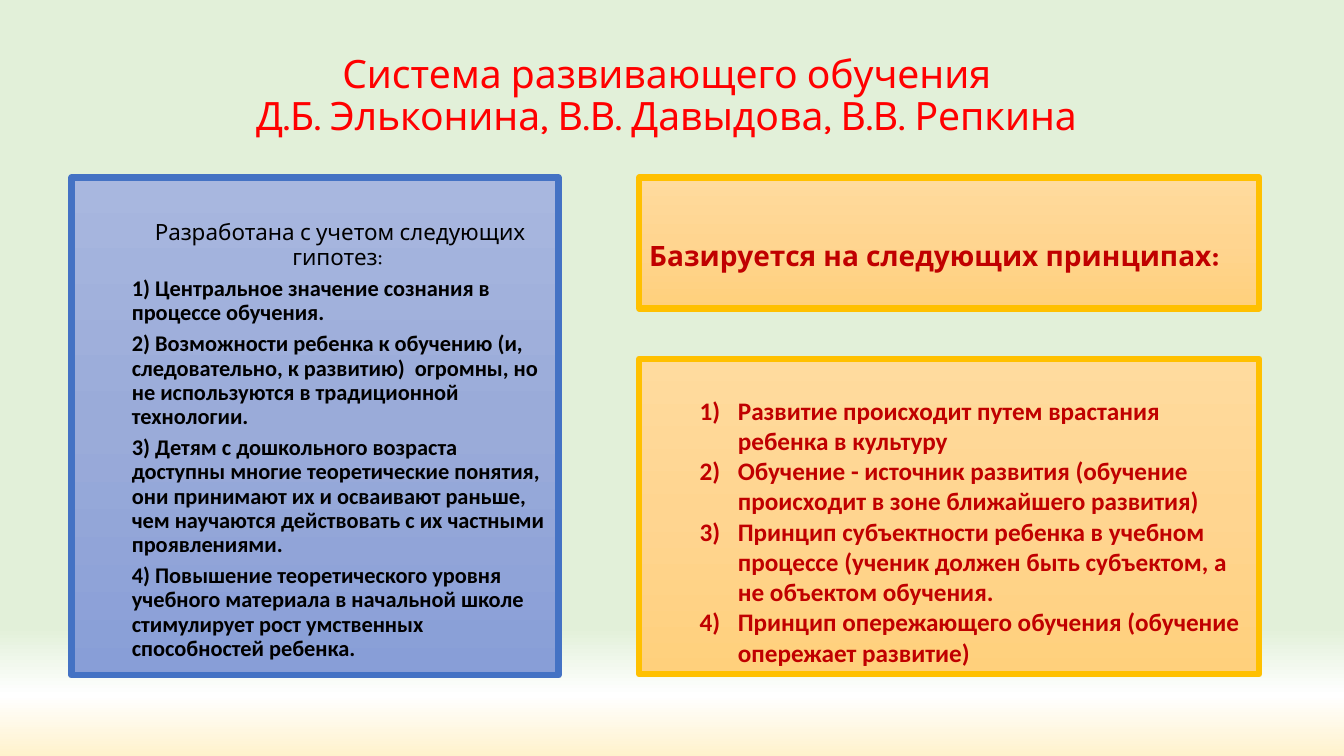
from lxml import etree
from pptx import Presentation
from pptx import util as u
from pptx.dml.color import RGBColor
from pptx.enum import shapes, text
from pptx.oxml.ns import qn

BLUE_STOPS = [(0, "A8B7DF"), (50, "9AABD9"), (100, "889ED7")]
ORANGE_STOPS = [(0, "FFDB9E"), (50, "FFD590"), (100, "FFD07C")]
BACKGROUND_STOPS = [(83, "E2F0D9"), (92, "FFFFFF"), (100, "FFF2CC")]

TITLE = ("Система развивающего обучения \n"
         "Д.Б. Эльконина, В.В. Давыдова, В.В. Репкина ")
HYPOTHESES_HEADING = "Разработана с учетом следующих гипотез: "
HYPOTHESES = [
    "1) Центральное значение сознания в процессе обучения.",
    "2) Возможности ребенка к обучению (и, следовательно, к развитию)  огромны, "
    "но не используются в традиционной технологии.",
    "3) Детям с дошкольного возраста доступны многие теоретические понятия, "
    "они принимают их и осваивают раньше, чем научаются действовать с их "
    "частными проявлениями.",
    "4) Повышение теоретического уровня учебного материала в начальной школе "
    "стимулирует рост умственных способностей ребенка.",
]
PRINCIPLES_HEADING = "Базируется на следующих принципах:"
PRINCIPLES = [
    "Развитие происходит путем врастания ребенка в культуру",
    "Обучение - источник развития (обучение происходит в зоне ближайшего развития)",
    "Принцип субъектности ребенка в учебном процессе (ученик должен быть "
    "субъектом, а не объектом обучения.",
    "Принцип опережающего обучения (обучение опережает развитие)",
]


def color(value):
    return RGBColor.from_string(value)


def fill_gradient(fill, element, stops):
    """Fill from top to bottom; element is the XML that holds the fill."""
    fill.gradient()
    fill.gradient_angle = 270
    stop_list = next(element.iter(qn("a:gsLst")))
    for stop in list(stop_list):
        stop_list.remove(stop)
    for position, value in stops:
        stop = etree.SubElement(stop_list, qn("a:gs"), pos=str(position * 1000))
        etree.SubElement(stop, qn("a:srgbClr"), val=value)


def prepare_frame(shape, top_inset):
    frame = shape.text_frame
    frame.word_wrap = True
    frame.auto_size = text.MSO_AUTO_SIZE.NONE
    frame.vertical_anchor = text.MSO_ANCHOR.TOP
    frame.margin_top = u.Inches(top_inset)
    return frame


def add_panel(slide, left, top, width, height, stops, line, top_inset):
    panel = slide.shapes.add_shape(
        shapes.MSO_SHAPE.RECTANGLE, *map(u.Inches, (left, top, width, height)))
    panel.shadow.inherit = False
    fill_gradient(panel.fill, panel._element.spPr, stops)
    panel.line.color.rgb = color(line)
    panel.line.width = u.Pt(4.5)
    return prepare_frame(panel, top_inset)


def add_text(frame, content, size, line_height, font="Calibri", fill="000000",
             bold=False, align=text.PP_ALIGN.LEFT, before=0, left=0, hanging=0,
             numbered=False):
    """Add a paragraph; a newline in the content becomes a line break."""
    paragraph = frame.paragraphs[0]
    if paragraph.runs:
        paragraph = frame.add_paragraph()
    paragraph.alignment = align
    paragraph.line_spacing = u.Pt(line_height)
    paragraph.space_before = u.Pt(before)
    properties = paragraph._p.get_or_add_pPr()
    properties.set("marL", str(u.Inches(left)))
    properties.set("indent", str(-u.Inches(hanging)))
    if numbered:
        etree.SubElement(properties, qn("a:buFont"), typeface="+mj-lt")
        etree.SubElement(properties, qn("a:buAutoNum"), type="arabicParenR")
    for index, line in enumerate(content.split("\n")):
        if index:
            paragraph.add_line_break()
        run = paragraph.add_run()
        run.text = line
        run.font.name = font
        run.font.size = u.Pt(size)
        run.font.bold = bold
        run.font.color.rgb = color(fill)


def add_title(slide):
    box = slide.shapes.add_textbox(*map(u.Inches, (0.71, 0.21, 11.9, 1.3)))
    add_text(prepare_frame(box, 0.33), TITLE, 27.9, 30, font="Karla",
             fill="FF0000", align=text.PP_ALIGN.CENTER)


def add_hypotheses(slide):
    frame = add_panel(slide, 0.71, 1.76, 4.83, 4.94, BLUE_STOPS, "4472C4", 0.42)
    add_text(frame, HYPOTHESES_HEADING, 16, 17.9, font="Karla",
             align=text.PP_ALIGN.CENTER, left=0.5)
    for hypothesis in HYPOTHESES:
        add_text(frame, hypothesis, 16, 17.3, bold=True, before=5, left=0.5)


def add_principles(slide):
    heading = add_panel(slide, 6.34, 1.76, 6.15, 1.3, ORANGE_STOPS, "FFC000", 0.55)
    add_text(heading, PRINCIPLES_HEADING, 20, 28, font="Karla", fill="C00000",
             bold=True)
    frame = add_panel(slide, 6.34, 3.56, 6.15, 3.13, ORANGE_STOPS, "FFC000", 0.36)
    for principle in PRINCIPLES:
        add_text(frame, principle, 18, 21.6, fill="C00000", bold=True,
                 left=0.88, hanging=0.38, numbered=True)


def main():
    presentation = Presentation()
    presentation.slide_width = u.Inches(13.33)
    presentation.slide_height = u.Inches(7.5)
    slide = presentation.slides.add_slide(presentation.slide_layouts[6])
    fill_gradient(slide.background.fill, slide._element, BACKGROUND_STOPS)
    add_title(slide)
    add_hypotheses(slide)
    add_principles(slide)
    presentation.save("out.pptx")


if __name__ == "__main__":
    main()
